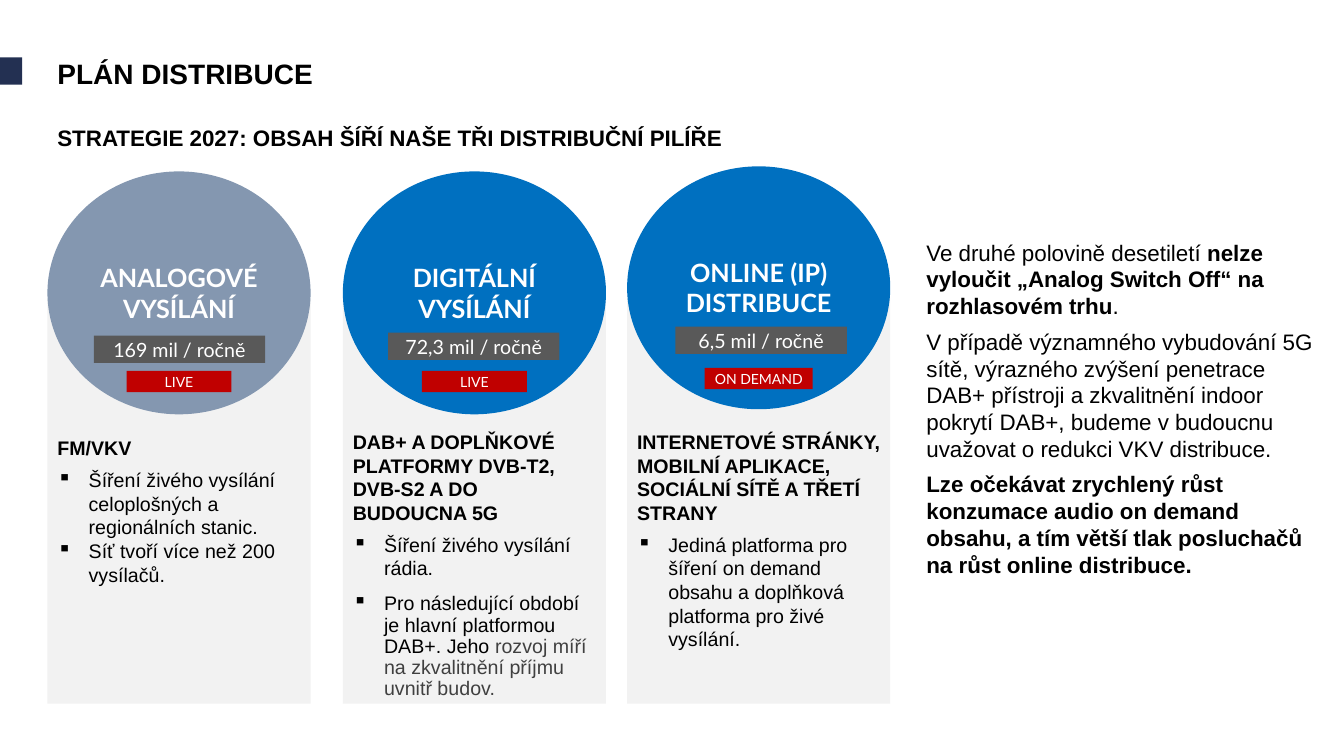
import pptx
import pptx.util
import pptx.dml.color
import pptx.enum.shapes
import pptx.enum.text
import pptx.oxml.ns
import lxml.etree

Kind = pptx.enum.shapes.MSO_SHAPE
Align = pptx.enum.text.PP_ALIGN
Pt = pptx.util.Pt

deck = pptx.Presentation()
deck.slide_width = pptx.util.Inches(13.33)
deck.slide_height = pptx.util.Inches(7.5)
slide = deck.slides.add_slide(deck.slide_layouts[6])
wide, high = deck.slide_width / 100, deck.slide_height / 100


def block(kind, x, y, w, h, fill=None):
    """Place a shape, or a text box if kind is None; lengths are percent of the slide."""
    place = [round(n) for n in (x * wide, y * high, w * wide, h * high)]
    if kind is None:
        item = slide.shapes.add_textbox(*place)
        item.text_frame.auto_size = pptx.enum.text.MSO_AUTO_SIZE.SHAPE_TO_FIT_TEXT
    else:
        item = slide.shapes.add_shape(kind, *place)
        item.shadow.inherit = False
        item.fill.solid()
        item.fill.fore_color.rgb = pptx.dml.color.RGBColor.from_string(fill)
        item.line.fill.background()
        item.text_frame.vertical_anchor = pptx.enum.text.MSO_ANCHOR.MIDDLE
    item.text_frame.word_wrap = True
    return item.text_frame


def write(frame, runs, size, font="Arial", align=Align.LEFT, after=0, bullet=False):
    """Add a paragraph of (text, bold, colour) runs."""
    first = frame.paragraphs[0]
    para = frame.add_paragraph() if first.runs else first
    para.alignment = align
    para.space_after = Pt(after)
    if bullet:
        props = para._p.get_or_add_pPr()
        step = round(2.33 * wide)
        props.set("marL", str(step))
        props.set("indent", str(-step))
        mark = lxml.etree.SubElement(props, pptx.oxml.ns.qn("a:buChar"))
        mark.set("char", "▪")
    for text, bold, ink in runs:
        run = para.add_run()
        run.text = text
        run.font.name = font
        run.font.size = Pt(size)
        run.font.bold = bold
        run.font.color.rgb = pptx.dml.color.RGBColor.from_string(ink)
    return para


black, white, gray = "000000", "FFFFFF", "404040"
blue, slate = "0070C0", "8497B0"
edge, span = 3.53, 19.58

# Headings
block(Kind.RECTANGLE, 0, 7.6, 1.65, 3.6, "233052")
write(block(None, edge, 6.8, 68.64, 5.87), [("PLÁN DISTRIBUCE", True, black)], 20)
write(block(None, edge, 15.73, 96.47, 4.93),
      [("STRATEGIE 2027: OBSAH ŠÍŘÍ NAŠE TŘI DISTRIBUČNÍ PILÍŘE", True, black)], 16)

# Pillars: left, circle (top, fill, name), cost (left, top, text),
# tag (top, width, text), notes (top, height, head, bullets)
pillars = [
    (edge, (22.67, slate, "ANALOGOVÉ VYSÍLÁNÍ"),
     (6.98, 44.4, "169 mil / ročně"), (49.07, 7.8, "LIVE"),
     (57.07, 24.4, "FM/VKV", [
         [("Šíření živého vysílání celoplošných a regionálních stanic.", False, black)],
         [("Síť tvoří více než 200 vysílačů.", False, black)]])),
    (25.51, (22.67, blue, "DIGITÁLNÍ VYSÍLÁNÍ"),
     (28.88, 44, "72,3 mil / ročně"), (49.07, 7.8, "LIVE"),
     (56.27, 40.4, "DAB+ A DOPLŇKOVÉ PLATFORMY DVB-T2, DVB-S2 A DO BUDOUCNA 5G", [
         [("Šíření živého vysílání rádia.", False, black)],
         [("Pro následující období je hlavní platformou DAB+. Jeho ", False, black),
          ("rozvoj míří na zkvalitnění příjmu uvnitř budov.", False, gray)]])),
    (46.66, (22, blue, "ONLINE (IP) DISTRIBUCE"),
     (50.26, 43.2, "6,5 mil / ročně"), (48.67, 8.03, "ON DEMAND"),
     (56.27, 33.87, "INTERNETOVÉ STRÁNKY, MOBILNÍ APLIKACE, SOCIÁLNÍ SÍTĚ A TŘETÍ STRANY", [
         [("Jediná platforma pro šíření on demand obsahu a doplňková platforma "
           "pro živé vysílání.", False, black)]])),
]
for left, disc, cost, tag, notes in pillars:
    block(Kind.RECTANGLE, left, 39.47, span, 53.6, "F2F2F2")
    frame = block(None, left, notes[0], span, notes[1])
    write(frame, [(notes[2], True, black)], 14, after=6)
    for runs in notes[3]:
        para = write(frame, runs, 14, bullet=True)
        if len(runs) > 1:
            para.line_spacing = 0.9
            para.space_before = Pt(10)

    labels = [
        (block(Kind.OVAL, left, disc[0], span, 32.13, disc[1]), disc[2], True, 18),
        (block(Kind.RECTANGLE, cost[0], cost[1], 12.75, 3.6, "595959"), cost[2], False, 14),
        (block(Kind.RECTANGLE, left + (span - tag[1]) / 2, tag[0], tag[1], 2.8, "C00000"),
         tag[2], False, 10),
    ]
    for frame, text, bold, size in labels:
        write(frame, [(text, bold, white)], size, "Lato", Align.CENTER)

# Outlook
outlook = [
    [("Ve druhé polovině desetiletí ", False, black),
     ("nelze vyloučit „Analog Switch Off“ na rozhlasovém trhu", True, black),
     (".", False, black)],
    [("V případě významného vybudování 5G sítě, výrazného zvýšení penetrace DAB+ přístroji "
      "a zkvalitnění indoor pokrytí DAB+, budeme v budoucnu uvažovat o redukci VKV "
      "distribuce.", False, black)],
    [("Lze očekávat zrychlený růst konzumace audio on demand obsahu, a tím větší tlak "
      "posluchačů na růst online distribuce.", True, black)],
]
frame = block(None, 68.19, 30.93, 30.68, 51.33)
for runs in outlook:
    write(frame, runs, 16, after=6)

deck.save("out.pptx")
